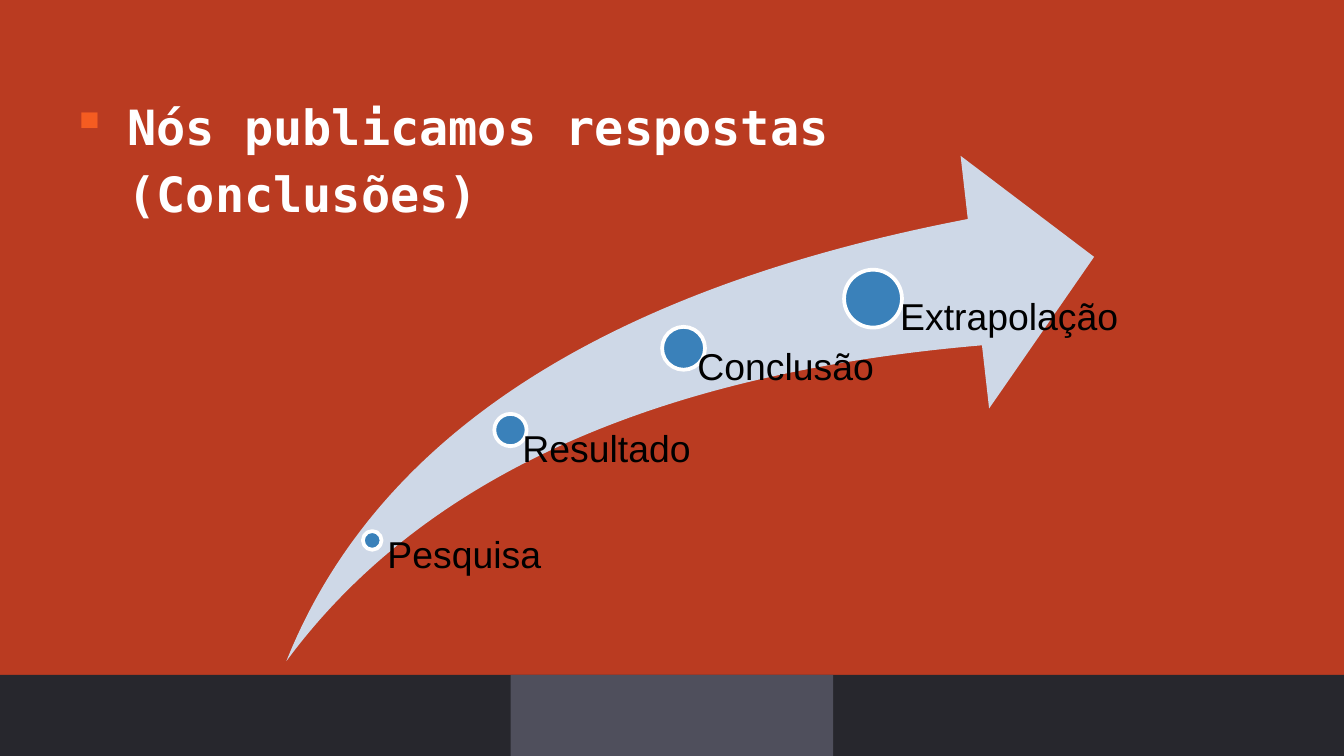
from lxml import etree
from pptx import Presentation
from pptx import util as u
from pptx.dml.color import RGBColor
from pptx.enum import shapes, text
from pptx.oxml.ns import qn

Pt = u.Pt
WIDTH, HEIGHT = 720, 405
FOOTER_TOP = 361.5
ARROW_LEFT, ARROW_TOP, ARROW_WIDTH, ARROW_HEIGHT = 153.4, 83.5, 432.7, 270.7

STEPS = [
    ("Pesquisa", 199.4, 289.5, 10, 202.3, 287.3, 158.4),
    ("Resultado", 273.5, 230.4, 17.3, 270.7, 230.4, 152.6),
    ("Conclusão", 366.2, 186.6, 23, 361.4, 186.5, 137.5),
    ("Extrapolação", 467.7, 160, 31, 465.8, 159.8, 183.6),
]


def colour(value):
    return RGBColor.from_string(value)


class SlideBuilder:
    background = "BA3B21"
    footer = "27272D"
    footer_accent = "4F4F5C"
    arrow_fill = "CED8E7"
    marker_fill = "3A81BA"
    white = "FFFFFF"
    black = "000000"
    bullet = "F55C21"
    label_font = "Arial"
    title_font = "DejaVu Sans Mono"

    def __init__(self, deck):
        self.slide = deck.slides.add_slide(deck.slide_layouts[6])
        fill = self.slide.background.fill
        fill.solid()
        fill.fore_color.rgb = colour(self.background)

    def shape(self, kind, left, top, width, height, fill, line=None):
        shape = self.slide.shapes.add_shape(
            kind, Pt(left), Pt(top), Pt(width), Pt(height)
        )
        shape.shadow.inherit = False
        shape.fill.solid()
        shape.fill.fore_color.rgb = colour(fill)
        if line:
            shape.line.color.rgb = colour(line)
            shape.line.width = Pt(2)
        else:
            shape.line.fill.background()
        return shape

    def band(self, left, width, fill):
        self.shape(shapes.MSO_SHAPE.RECTANGLE, left, FOOTER_TOP, width,
                   HEIGHT - FOOTER_TOP, fill)

    def arrow(self):
        arrow = self.shape(shapes.MSO_SHAPE.SWOOSH_ARROW, ARROW_LEFT, ARROW_TOP,
                           ARROW_WIDTH, ARROW_HEIGHT, self.arrow_fill)
        arrow.adjustments[0] = 0.25
        arrow.adjustments[1] = 0.25

    def marker(self, centre_x, centre_y, size):
        self.shape(shapes.MSO_SHAPE.OVAL, centre_x - size / 2, centre_y - size / 2,
                   size, size, self.marker_fill, self.white)

    def text(self, words, left, top, width, height, font, size, fill, bold=False):
        box = self.slide.shapes.add_textbox(Pt(left), Pt(top), Pt(width), Pt(height))
        frame = box.text_frame
        frame.word_wrap = True
        frame.vertical_anchor = text.MSO_ANCHOR.TOP
        para = frame.paragraphs[0]
        para.text = words
        para.font.name = font
        para.font.size = Pt(size)
        para.font.bold = bold
        para.font.color.rgb = colour(fill)
        return frame, para

    def label(self, words, left, top, width, inset):
        frame, para = self.text(words, left, top, width,
                                ARROW_TOP + ARROW_HEIGHT - top,
                                self.label_font, 20, self.black)
        frame.margin_left = Pt(inset)
        frame.margin_top = frame.margin_right = frame.margin_bottom = 0
        para.line_spacing = 0.9
        para.space_after = Pt(7)

    def title(self, words):
        frame, para = self.text(words, 25.2, 43.9, 453.6, 96.5,
                                self.title_font, 26, self.white, bold=True)
        frame.auto_size = text.MSO_AUTO_SIZE.SHAPE_TO_FIT_TEXT
        para.line_spacing = 1.15
        para.space_before = Pt(6)
        props = para._p.get_or_add_pPr()
        props.set("marL", str(Pt(36)))
        props.set("indent", str(-Pt(30)))
        bullet_colour = etree.Element(qn("a:buClr"))
        etree.SubElement(bullet_colour, qn("a:srgbClr"), val=self.bullet)
        bullet = etree.Element(qn("a:buChar"), char="▪")
        position = len(props.findall(qn("a:lnSpc")) + props.findall(qn("a:spcBef")))
        props.insert(position, bullet_colour)
        props.insert(position + 1, bullet)


def main():
    deck = Presentation()
    deck.slide_width, deck.slide_height = Pt(WIDTH), Pt(HEIGHT)
    page = SlideBuilder(deck)
    page.band(0, WIDTH, page.footer)
    page.band(273.6, 172.8, page.footer_accent)
    page.arrow()
    for words, centre_x, centre_y, size, left, top, width in STEPS:
        page.marker(centre_x, centre_y, size)
        page.label(words, left, top, width, 0.53 * size)
    page.title("Nós publicamos respostas (Conclusões)")
    deck.save("out.pptx")


if __name__ == "__main__":
    main()
